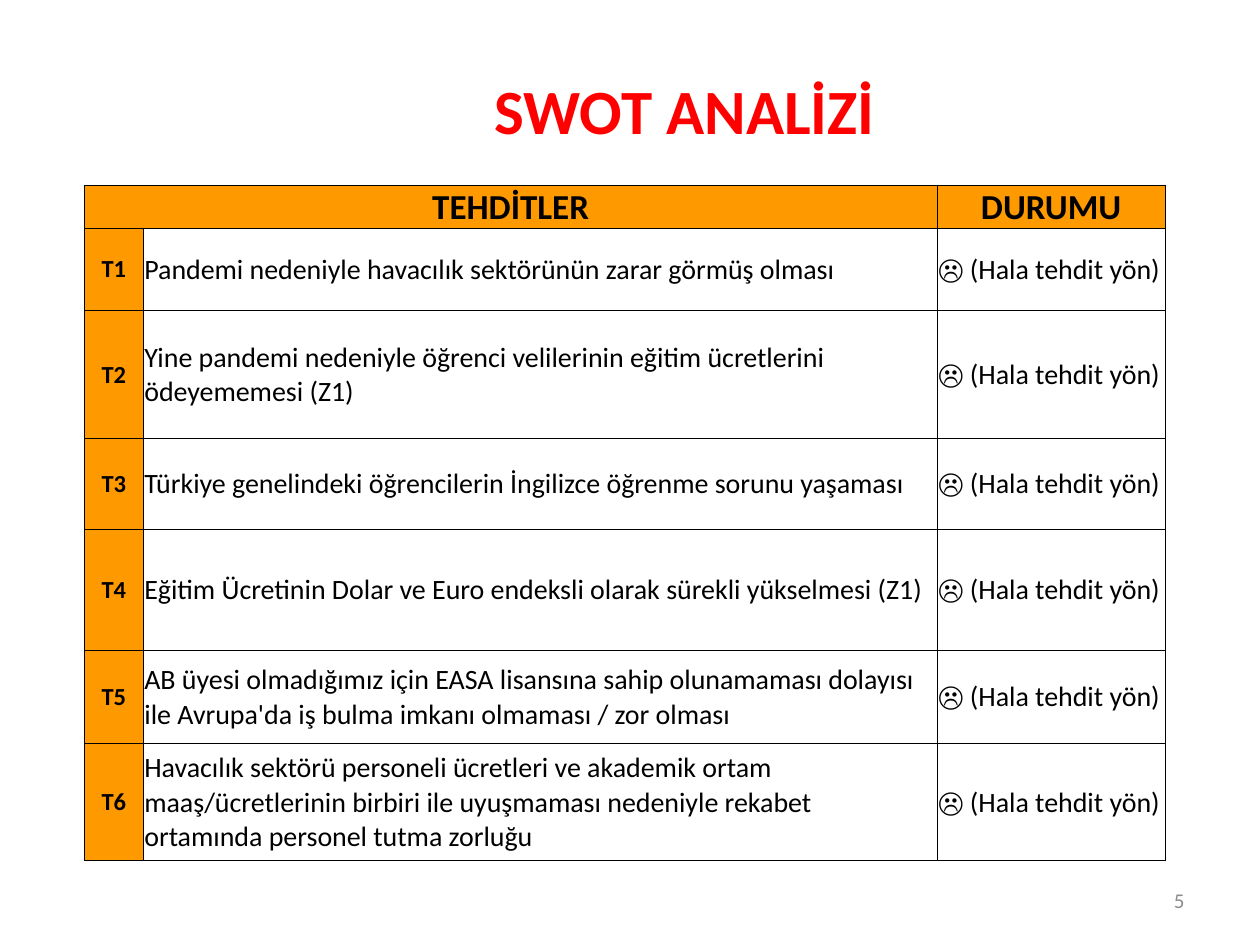
from lxml import etree
from pptx import Presentation
from pptx.dml.color import RGBColor
from pptx.enum.text import MSO_ANCHOR, PP_ALIGN
from pptx.oxml.ns import qn
from pptx.util import Cm, Pt

LEFT, CENTER, RIGHT = PP_ALIGN.LEFT, PP_ALIGN.CENTER, PP_ALIGN.RIGHT
TOP, MIDDLE = MSO_ANCHOR.TOP, MSO_ANCHOR.MIDDLE

RED = RGBColor(0xFF, 0x00, 0x00)
GRAY = RGBColor(0x8C, 0x8C, 0x8C)
BLACK = RGBColor(0x00, 0x00, 0x00)
WHITE = RGBColor(0xFF, 0xFF, 0xFF)
ORANGE = RGBColor(0xFF, 0x99, 0x00)

TITLE_FONT = {"name": "Calibri", "size": Pt(36), "bold": True}
NUMBER_FONT = {"name": "Calibri", "size": Pt(12), "bold": False}
HEADER_FONT = {"name": "Calibri", "size": Pt(20), "bold": True}
CODE_FONT = {"name": "Calibri", "size": Pt(14), "bold": True}
BODY_FONT = {"name": "Calibri", "size": Pt(16), "bold": False}
SYMBOL_FONT = {**BODY_FONT, "name": "Arial"}

CELL_FORMAT = {
    "vertical_anchor": MIDDLE,
    "margin_left": Cm(0.02),
    "margin_top": Cm(0.02),
    "margin_right": Cm(0.02),
    "margin_bottom": Cm(0),
}
BORDER_WIDTH = Pt(0.5)
COLUMN_WIDTHS = [1.19, 16, 4.6]
HEADER_HEIGHT = 0.66
STATUS = [("☹", SYMBOL_FONT), (" (Hala tehdit yön)", BODY_FONT)]
THREATS = [
    ("Pandemi nedeniyle havacılık sektörünün zarar görmüş olması", 1.65),
    ("Yine pandemi nedeniyle öğrenci velilerinin eğitim ücretlerini "
     "ödeyememesi (Z1)", 2.59),
    ("Türkiye genelindeki öğrencilerin İngilizce öğrenme sorunu yaşaması", 1.83),
    ("Eğitim Ücretinin Dolar ve Euro endeksli olarak sürekli yükselmesi (Z1)", 2.44),
    ("AB üyesi olmadığımız için EASA lisansına sahip olunamaması dolayısı ile "
     "Avrupa'da iş bulma imkanı olmaması / zor olması", 1.88),
    ("Havacılık sektörü personeli ücretleri ve akademik ortam "
     "maaş/ücretlerinin birbiri ile uyuşmaması nedeniyle rekabet ortamında "
     "personel tutma zorluğu", 2.36),
]


def set_attributes(target, values):
    for name, value in values.items():
        setattr(target, name, value)


def write_runs(frame, runs, alignment, color=BLACK):
    paragraph = frame.paragraphs[0]
    paragraph.alignment = alignment
    for text, font_format in runs:
        run = paragraph.add_run()
        run.text = text
        set_attributes(run.font, font_format)
        run.font.color.rgb = color


def add_label(slide, bounds, text, font_format, alignment, anchor, color):
    frame = slide.shapes.add_textbox(*map(Cm, bounds)).text_frame
    set_attributes(frame, {"word_wrap": True, "vertical_anchor": anchor})
    write_runs(frame, [(text, font_format)], alignment, color)


def add_borders(cell):
    properties = cell._tc.get_or_add_tcPr()
    for position, side in enumerate(("a:lnL", "a:lnR", "a:lnT", "a:lnB")):
        border = etree.Element(qn(side), w=str(BORDER_WIDTH))
        fill = etree.SubElement(border, qn("a:solidFill"))
        etree.SubElement(fill, qn("a:srgbClr"), val=str(BLACK))
        properties.insert(position, border)


def fill_cell(cell, runs, alignment, color):
    set_attributes(cell, CELL_FORMAT)
    cell.fill.solid()
    cell.fill.fore_color.rgb = color
    add_borders(cell)
    write_runs(cell.text_frame, runs, alignment)


def add_threat_table(slide):
    row_heights = [HEADER_HEIGHT] + [height for _, height in THREATS]
    table = slide.shapes.add_table(
        len(row_heights), len(COLUMN_WIDTHS), Cm(1.7), Cm(3.73),
        Cm(sum(COLUMN_WIDTHS)), Cm(sum(row_heights)),
    ).table
    for column, width in zip(table.columns, COLUMN_WIDTHS):
        column.width = Cm(width)
    for row, height in zip(table.rows, row_heights):
        row.height = Cm(height)

    table.cell(0, 0).merge(table.cell(0, 1))
    add_borders(table.cell(0, 1))
    for column, heading in ((0, "TEHDİTLER"), (2, "DURUMU")):
        fill_cell(table.cell(0, column), [(heading, HEADER_FONT)], CENTER, ORANGE)
    for number, (threat, _) in enumerate(THREATS, 1):
        code_cell, threat_cell, status_cell = table.rows[number].cells
        fill_cell(code_cell, [(f"T{number}", CODE_FONT)], CENTER, ORANGE)
        fill_cell(threat_cell, [(threat, BODY_FONT)], LEFT, WHITE)
        fill_cell(status_cell, STATUS, LEFT, WHITE)


def main():
    presentation = Presentation()
    set_attributes(presentation, {"slide_width": Cm(25.4), "slide_height": Cm(19.05)})
    slide = presentation.slides.add_slide(presentation.slide_layouts[6])
    add_label(slide, (18.2, 17.65, 5.93, 1.01), "5", NUMBER_FONT, RIGHT, MIDDLE, GRAY)
    add_label(slide, (4.1, 1.32, 19.4, 1.8), "SWOT ANALİZİ", TITLE_FONT, CENTER, TOP, RED)
    add_threat_table(slide)
    presentation.save("out.pptx")


if __name__ == "__main__":
    main()
